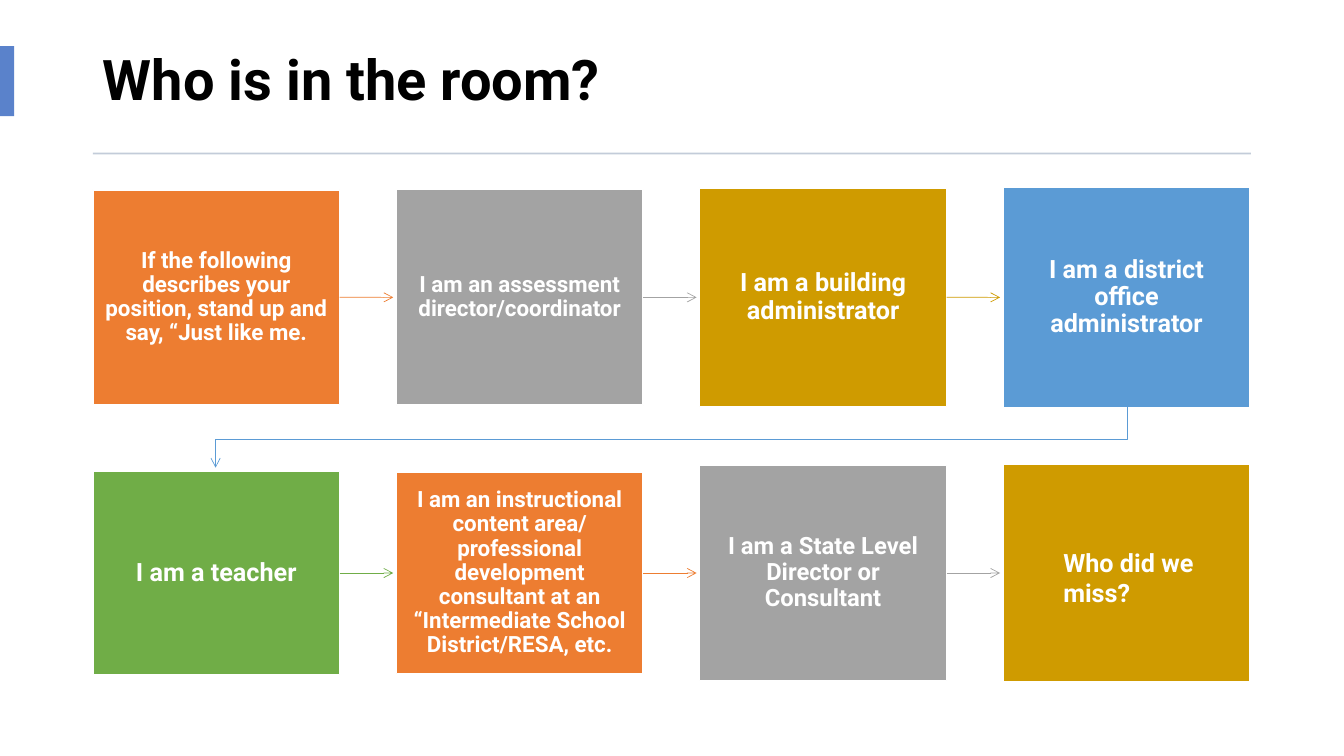
import pptx
import pptx.util
import pptx.dml.color
import pptx.enum.shapes
import pptx.enum.text
import pptx.oxml
import pptx.oxml.ns

Pt = pptx.util.Pt
ALIGN = pptx.enum.text.PP_ALIGN
MIDDLE = pptx.enum.text.MSO_ANCHOR.MIDDLE
RIGHT_SIDE = 3

# Grid of steps, in points
LEFT, PITCH, BOX_WIDTH = 66.3, 216.72, 176.4
ROW_CENTERS = (212.4, 409.3)
ARROW_LENGTH = 38.2

# Wording, fill, height, text size
STEPS = [
    ("If the following describes your position, stand up and say, “Just like me.", "ED7D31", 153.4, 16),
    ("I am an assessment director/coordinator", "A3A3A3", 154, 16),
    ("I am a building administrator", "CF9B00", 156.2, 18),
    ("I am a district office administrator", "5B9BD5", 157, 18),
    ("I am a teacher", "70AD47", 144.7, 18),
    ("I am an instructional content area/ professional development consultant at an "
     "“Intermediate School District/RESA, etc.", "ED7D31", 144, 16),
    ("I am a State Level Director or Consultant", "A3A3A3", 153.4, 17),
    ("", "CF9B00", 155.5, 18),
]


def color(hex_value):
    return pptx.dml.color.RGBColor.from_string(hex_value)


def set_attributes(target, values):
    for name, value in values.items():
        setattr(target, name, value)


def write(frame, text, size, hex_value, align, spacing=1.0, **frame_format):
    set_attributes(frame, {"word_wrap": True, **frame_format})
    paragraph = frame.paragraphs[0]
    set_attributes(paragraph, {"alignment": align, "line_spacing": spacing})
    run = paragraph.add_run()
    run.text = text
    set_attributes(run.font, {"name": "Roboto", "size": Pt(size), "bold": True})
    run.font.color.rgb = color(hex_value)


def add_bar(slide, left, top, width, height, hex_value):
    bar = slide.shapes.add_shape(pptx.enum.shapes.MSO_SHAPE.RECTANGLE,
                                 Pt(left), Pt(top), Pt(width), Pt(height))
    bar.shadow.inherit = False
    bar.fill.solid()
    bar.fill.fore_color.rgb = color(hex_value)
    bar.line.fill.background()
    return bar


def add_step(slide, left, center, text, hex_value, height, size):
    step = add_bar(slide, left, center - height / 2, BOX_WIDTH, height, hex_value)
    step.line.color.rgb = color("FFFFFF")
    step.line.width = Pt(1)
    if text:
        write(step.text_frame, text, size, "FFFFFF", ALIGN.CENTER, 0.9,
              vertical_anchor=MIDDLE, margin_left=Pt(8.6), margin_right=Pt(8.6),
              margin_top=Pt(9.4), margin_bottom=Pt(9.4))
    return step


def style_arrow(arrow, hex_value):
    arrow.line.color.rgb = color(hex_value)
    arrow.line.width = Pt(0.5)
    head = pptx.oxml.parse_xml(
        f'<a:tailEnd {pptx.oxml.ns.nsdecls("a")} type="arrow"/>')
    arrow.line._get_or_add_ln().append(head)


def add_arrow(slide, step, left, center, hex_value):
    start = left + BOX_WIDTH
    arrow = slide.shapes.add_connector(pptx.enum.shapes.MSO_CONNECTOR.STRAIGHT, Pt(start),
                                       Pt(center), Pt(start + ARROW_LENGTH), Pt(center))
    arrow.begin_connect(step, RIGHT_SIDE)
    style_arrow(arrow, hex_value)
    arrow._element.spPr.append(
        pptx.oxml.parse_xml(f'<a:effectLst {pptx.oxml.ns.nsdecls("a")}/>'))


def add_row_return(slide, points, hex_value):
    builder = slide.shapes.build_freeform(*points[0], scale=Pt(1))
    builder.add_line_segments(points[1:], close=False)
    row_return = builder.convert_to_shape()
    row_return.shadow.inherit = False
    row_return.fill.background()
    style_arrow(row_return, hex_value)


def add_title(slide, text):
    title = slide.shapes.title
    set_attributes(title, {"left": Pt(66.3), "top": Pt(19.4),
                           "width": Pt(827.3), "height": Pt(79.2)})
    write(title.text_frame, text, 40, "000000", ALIGN.LEFT, 0.9, vertical_anchor=MIDDLE,
          auto_size=pptx.enum.text.MSO_AUTO_SIZE.NONE)


def main():
    deck = pptx.Presentation()
    set_attributes(deck, {"slide_width": Pt(960), "slide_height": Pt(540)})
    slide = deck.slides.add_slide(deck.slide_layouts[5])

    # Heading with accent and rule
    add_title(slide, "Who is in the room?")
    add_bar(slide, 0, 33, 10.1, 50, "5A82CB")
    add_bar(slide, 66.3, 109, 827.3, 1.4, "C3CCD9")

    # Steps, four to a row, with arrows between neighbours
    for index, (text, hex_value, height, size) in enumerate(STEPS):
        row, column = divmod(index, 4)
        left, center = LEFT + column * PITCH, ROW_CENTERS[row]
        step = add_step(slide, left, center, text, hex_value, height, size)
        if column < 3:
            add_arrow(slide, step, left, center, hex_value)

    # Arrow from the end of the first row to the start of the second
    first_x = LEFT + BOX_WIDTH / 2
    last_x = first_x + 3 * PITCH
    add_row_return(slide, [(last_x, 291), (last_x, 313.7), (first_x, 313.7), (first_x, 334)],
                   "5B9BD5")

    # Closing question
    question = slide.shapes.add_textbox(Pt(752.4), Pt(387.4), Pt(114.5), Pt(51))
    write(question.text_frame, "Who did we miss?", 18, "FFFFFF", ALIGN.LEFT)

    deck.save("out.pptx")


if __name__ == "__main__":
    main()
